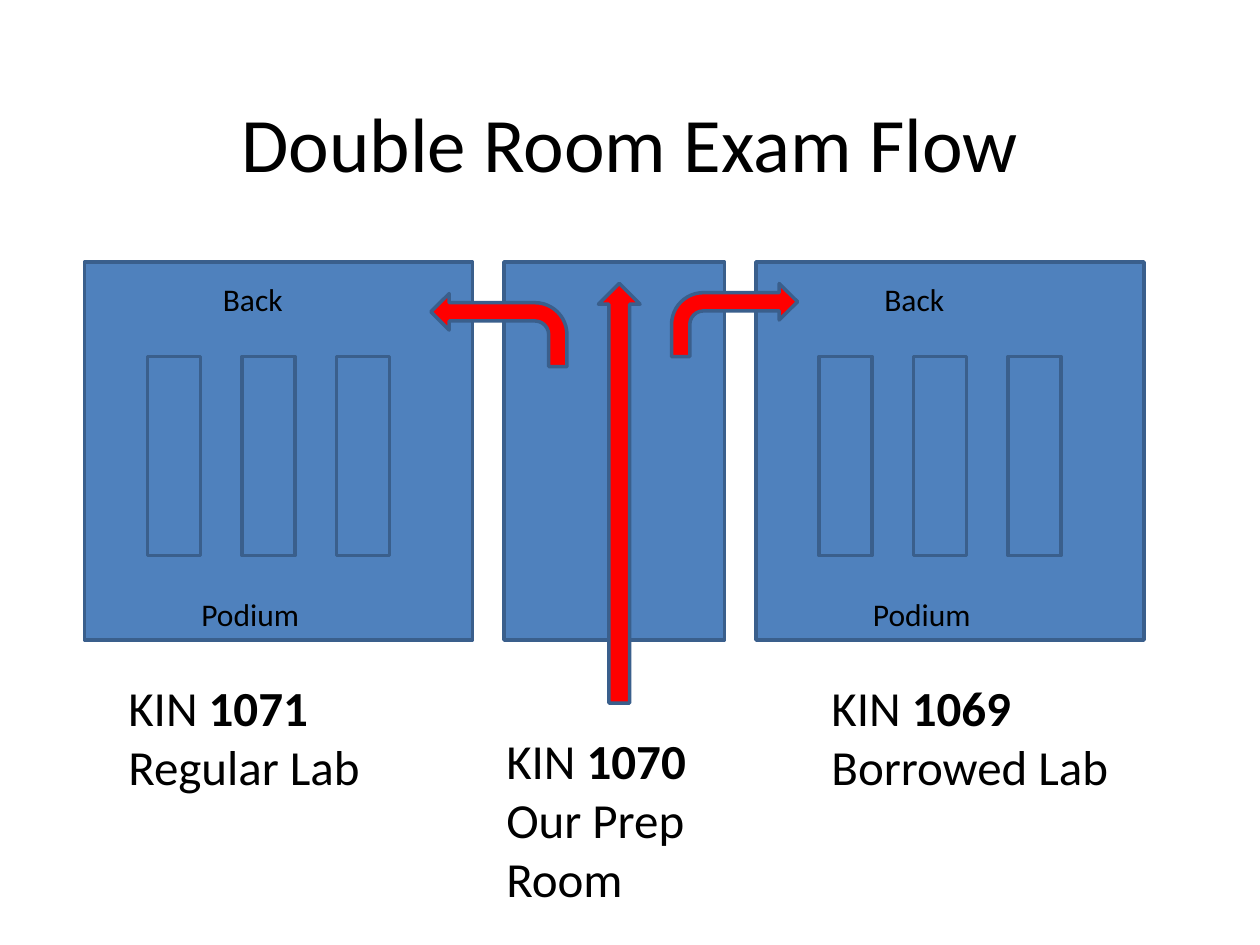
import pptx
import pptx.util
import pptx.dml.color
import pptx.enum.shapes
import pptx.enum.text

Inches, Pt = pptx.util.Inches, pptx.util.Pt
SHAPE = pptx.enum.shapes.MSO_SHAPE

TITLE = "Double Room Exam Flow"
BLUE, OUTLINE, RED, BLACK = "4F81BD", "3A5F8C", "FF0000", "000000"

ROOM_TOP, ROOM_HEIGHT = 2.08, 3
ROOMS = [(0.67, 3.08), (6, 3.08), (4, 1.75)]  # left, width

ARROWS = [  # preset, box, flipped
    (SHAPE.BENT_ARROW, (5.33, 2.25, 1, 0.58), False),
    (SHAPE.BENT_ARROW, (3.42, 2.33, 1.08, 0.58), True),
    (SHAPE.UP_ARROW, (4.75, 2.25, 0.33, 3.33), False),
]

CAPTIONS = [  # room number, use, box
    ("1071", "Regular Lab", (0.92, 5.33, 2.58, 1.04)),
    ("1069", "Borrowed Lab", (6.5, 5.33, 2.92, 1.04)),
    ("1070", "Our Prep Room", (3.92, 5.75, 2, 1.51)),
]

LABELS = [
    ("Back", (1.67, 2.17, 0.92, 0.4)),
    ("Back", (6.92, 2.17, 0.92, 0.4)),
    ("Podium", (1.5, 4.67, 1.17, 0.4)),
    ("Podium", (6.83, 4.67, 1.17, 0.4)),
]

BENCH_STARTS = [1.17, 6.5]
BENCHES_PER_LAB, BENCH_STEP = 3, 0.75
BENCH_TOP, BENCH_WIDTH, BENCH_HEIGHT = 2.83, 0.42, 1.58


def rgb(value):
    return pptx.dml.color.RGBColor.from_string(value)


def add_block(s, preset, box, fill):
    sp = s.shapes.add_shape(preset, *map(Inches, box))
    sp.shadow.inherit = False
    sp.fill.solid()
    sp.fill.fore_color.rgb = rgb(fill)
    sp.line.color.rgb = rgb(OUTLINE)
    sp.line.width = Pt(2)
    return sp


def add_run(p, text, size, bold=False):
    r = p.add_run()
    r.text = text
    for name, value in {"name": "Calibri", "size": Pt(size), "bold": bold}.items():
        setattr(r.font, name, value)
    r.font.color.rgb = rgb(BLACK)


def add_text(s, box, lines, size):
    """Add a text box; each line is a list of (text, bold) runs."""
    tf = s.shapes.add_textbox(*map(Inches, box)).text_frame
    tf.word_wrap = True
    tf.auto_size = pptx.enum.text.MSO_AUTO_SIZE.SHAPE_TO_FIT_TEXT
    for i, line in enumerate(lines):
        p = tf.add_paragraph() if i else tf.paragraphs[0]
        for text, bold in line:
            add_run(p, text, size, bold)


def add_title(s):
    sp = s.shapes.title
    sp.left, sp.top, sp.width, sp.height = map(Inches, (0.5, 0.5, 9, 1.25))
    tf = sp.text_frame
    tf.vertical_anchor = pptx.enum.text.MSO_ANCHOR.MIDDLE
    p = tf.paragraphs[0]
    p.alignment = pptx.enum.text.PP_ALIGN.CENTER
    add_run(p, TITLE, 44)


def main():
    prs = pptx.Presentation()
    prs.slide_width, prs.slide_height = Inches(10), Inches(7.5)
    s = prs.slides.add_slide(prs.slide_layouts[5])
    add_title(s)

    for left, width in ROOMS:
        add_block(s, SHAPE.RECTANGLE, (left, ROOM_TOP, width, ROOM_HEIGHT), BLUE)

    for preset, box, flipped in ARROWS:
        sp = add_block(s, preset, box, RED)
        if flipped:
            sp.element.spPr.xfrm.set("flipH", "1")

    for number, use, box in CAPTIONS:
        add_text(s, box, [[("KIN ", False), (number, True)], [(use, False)]], 28)

    for text, box in LABELS:
        add_text(s, box, [[(text, False)]], 18)

    for start in BENCH_STARTS:
        for i in range(BENCHES_PER_LAB):
            box = (start + i * BENCH_STEP, BENCH_TOP, BENCH_WIDTH, BENCH_HEIGHT)
            add_block(s, SHAPE.RECTANGLE, box, BLUE)

    prs.save("out.pptx")


if __name__ == "__main__":
    main()
